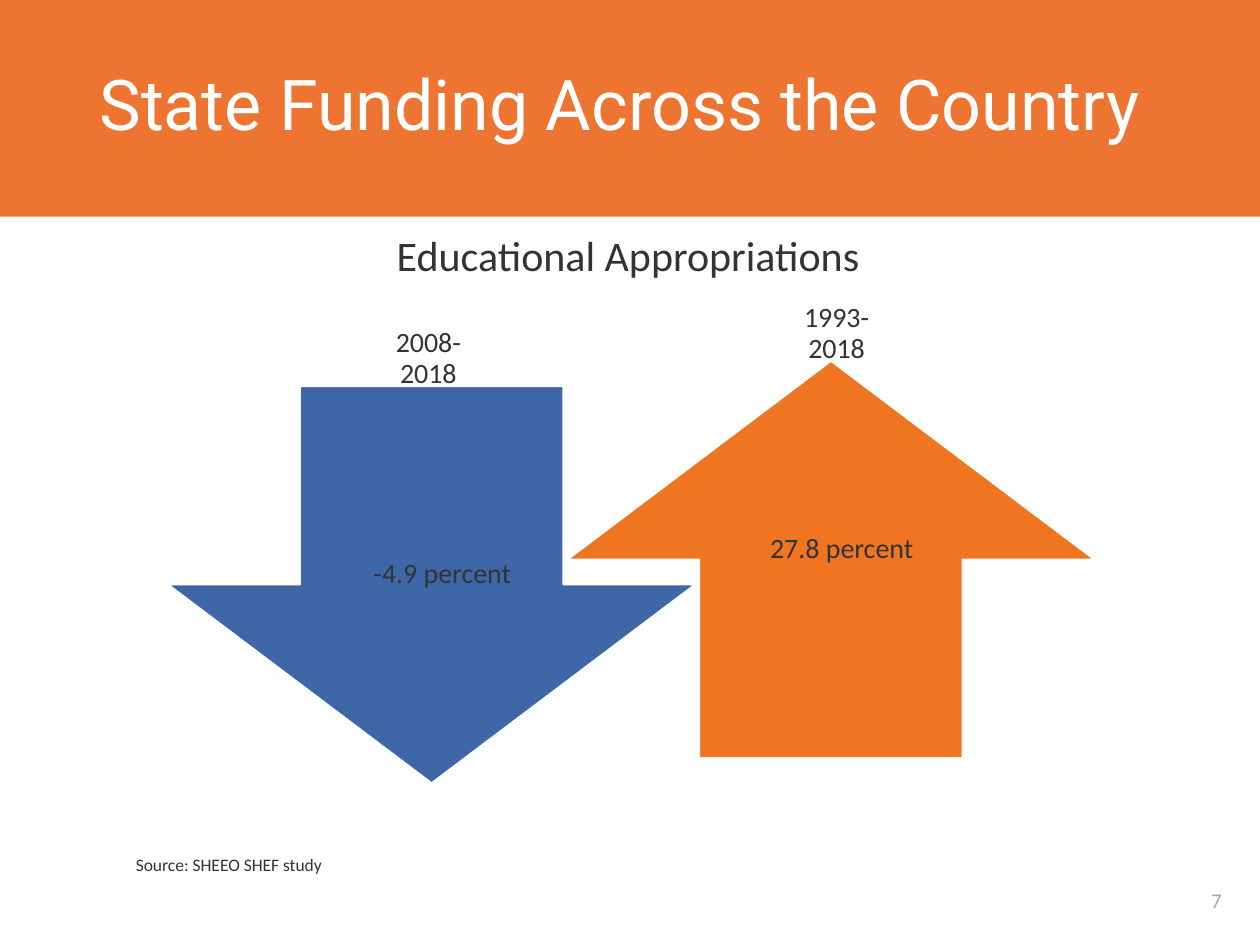
from dataclasses import dataclass

from pptx import Presentation
from pptx.dml.color import RGBColor
from pptx.enum.shapes import MSO_SHAPE
from pptx.enum.text import MSO_ANCHOR, MSO_AUTO_SIZE, PP_ALIGN
from pptx.util import Inches, Pt

RECT, ARROW = MSO_SHAPE.RECTANGLE, MSO_SHAPE.RIGHT_ARROW
TOP, MIDDLE = MSO_ANCHOR.TOP, MSO_ANCHOR.MIDDLE
LEFT, CENTER = PP_ALIGN.LEFT, PP_ALIGN.CENTER
NO_FIT = MSO_AUTO_SIZE.NONE
WHITE, DARK, GREY = "FFFFFF", "333333", "A6A6A6"
BAND, ORANGE, BLUE = "EE7531", "EF7521", "3E67A7"


@dataclass
class Trend:
    years: str
    change: str
    left: float
    top: float
    rotation: int
    color: str
    years_dx: float


TRENDS = [
    Trend("1993-2018", "27.8 percent", 5.02, 2.35, 270, ORANGE, 1.15),
    Trend("2008-2018", "-4.9 percent", 1.85, 2.55, 90, BLUE, 1.08),
]


def rgb(color: str) -> RGBColor:
    return RGBColor.from_string(color)


def write(shape, text: str, size: int, color: str = DARK, font: str = "Calibri",
          align=LEFT, anchor=TOP, spacing: float = 1.0, insets=None) -> None:
    tf = shape.text_frame
    frame = {"word_wrap": True, "auto_size": NO_FIT, "vertical_anchor": anchor}
    if insets:
        side, edge = (Inches(i) for i in insets)
        frame |= {"margin_left": side, "margin_right": side,
                  "margin_top": edge, "margin_bottom": edge}
    for name, value in frame.items():
        setattr(tf, name, value)
    p = tf.paragraphs[0]
    p.alignment, p.line_spacing = align, spacing
    r = p.add_run()
    r.text = text
    for name, value in {"size": Pt(size), "name": font}.items():
        setattr(r.font, name, value)
    r.font.color.rgb = rgb(color)


def add_text(shapes, box: tuple, text: str, size: int, **style) -> None:
    write(shapes.add_textbox(*map(Inches, box)), text, size, **style)


def add_filled(shapes, kind, box: tuple, color: str):
    sp = shapes.add_shape(kind, *map(Inches, box))
    sp.shadow.inherit = False
    sp.fill.solid()
    sp.fill.fore_color.rgb = rgb(color)
    sp.line.fill.background()
    return sp


def add_trend(s, t: Trend) -> None:
    """Draw a vertical arrow with its years at the top and its change inside."""
    shapes = s.shapes.add_group_shape().shapes
    arrow = add_filled(shapes, ARROW, (t.left, t.top, 3.15, 4.18), t.color)
    arrow.rotation = t.rotation
    arrow.line.color.rgb = rgb(WHITE)
    arrow.line.width = Pt(1)
    labels = [(t.change, 0.85, 1.71, 1.62), (t.years, t.years_dx, 0, 0.94)]
    for text, dx, dy, width in labels:
        add_text(shapes, (t.left + dx, t.top + dy, width, 0.6), text, 16,
                 align=CENTER, anchor=MIDDLE, spacing=0.9, insets=(0, 0.18))


def main() -> None:
    prs = Presentation()
    prs.slide_width, prs.slide_height = Inches(10), Inches(7.5)
    s = prs.slides.add_slide(prs.slide_layouts[5])

    band = add_filled(s.shapes, RECT, (-0.01, 0, 10.02, 1.72), BAND)
    title = s.shapes.title
    band._element.addnext(title._element)
    title.left, title.top, title.width, title.height = map(
        Inches, (0.69, 0, 8.62, 1.71))
    write(title, "State Funding Across the Country", 40, WHITE, "Roboto",
          anchor=MIDDLE, spacing=0.9)

    for trend in TRENDS:
        add_trend(s, trend)
    add_text(s.shapes, (3.05, 1.77, 3.91, 0.5), "Educational Appropriations", 24)
    add_text(s.shapes, (0.98, 6.73, 3.84, 0.27), "Source: SHEEO SHEF study", 10)
    add_text(s.shapes, (9.31, 6.95, 0.69, 0.39), "7", 12, color=GREY,
             align=CENTER, anchor=MIDDLE)
    prs.save("out.pptx")


if __name__ == "__main__":
    main()
